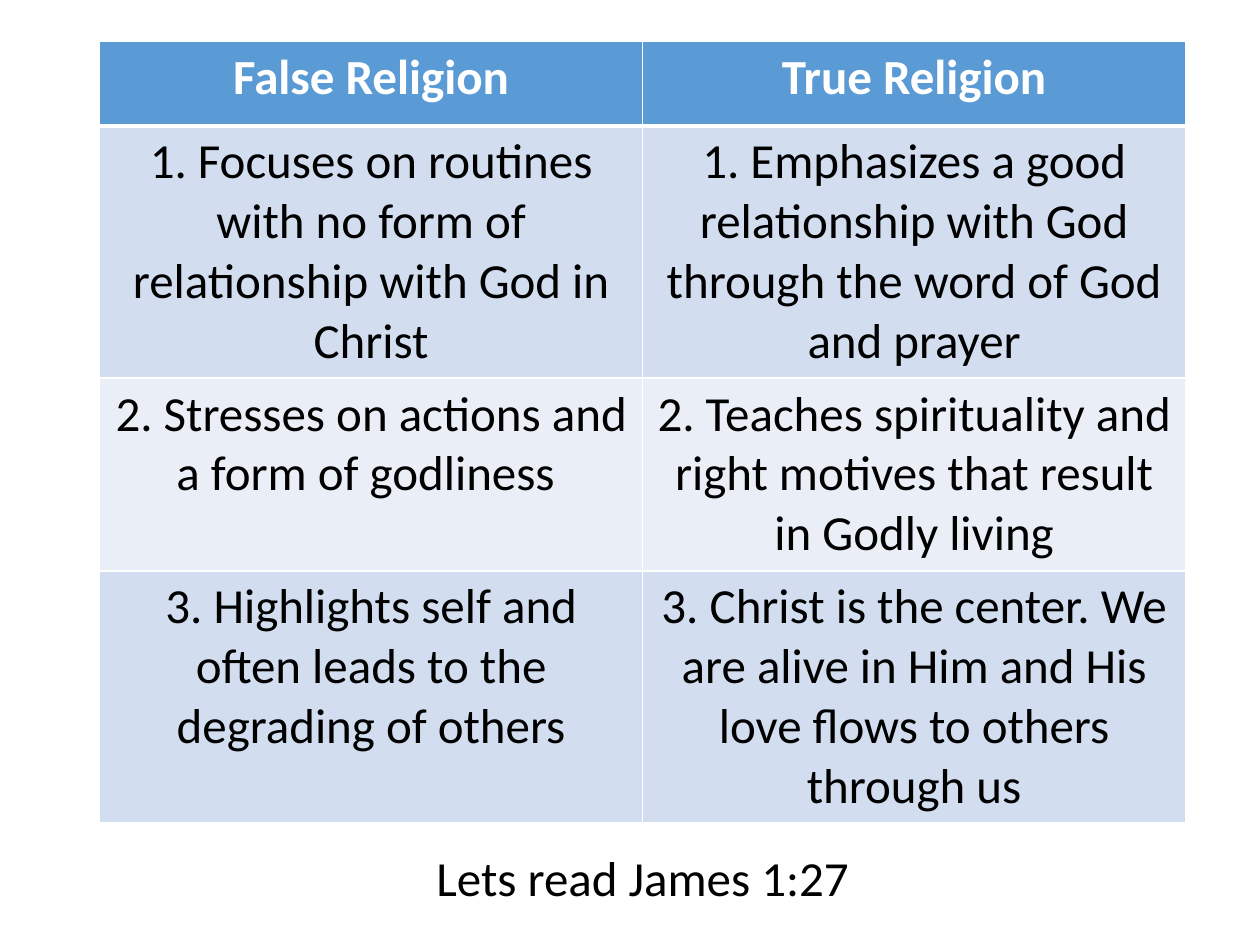
from dataclasses import dataclass

from lxml.etree import SubElement
from pptx import Presentation
from pptx.dml.color import RGBColor
from pptx.enum.text import PP_ALIGN
from pptx.oxml.ns import qn
from pptx.util import Inches, Pt

WIDTH, HEIGHT = Inches(10), Inches(7.5)
WHITE, BLACK = "FFFFFF", "000000"


@dataclass(frozen=True)
class Band:
    false_religion: str
    true_religion: str
    height: float
    fill: str
    ink: str = BLACK
    bold: bool = False
    top: float = 1
    bottom: float = 1


BANDS = [
    Band("False Religion", "True Religion", 0.67, "5B9BD5", WHITE, True, bottom=3),
    Band("1. Focuses on routines with no form of relationship with God in Christ",
         "1. Emphasizes a good relationship with God through the word of God and prayer",
         2, "D2DEEF", top=3),
    Band("2. Stresses on actions and a form of godliness ",
         "2. Teaches spirituality and right motives that result in Godly living",
         1.53, "EAEFF7"),
    Band("3. Highlights self and often leads to the degrading of others",
         "3. Christ is the center. We are alive in Him and His love flows to others through us",
         2, "D2DEEF"),
]


def color(value: str) -> RGBColor:
    return RGBColor.from_string(value)


def write(frame, text: str, ink: str, bold: bool = False):
    paragraph = frame.paragraphs[0]
    paragraph.alignment = PP_ALIGN.CENTER
    run = paragraph.add_run()
    run.text = text
    run.font.name = "Calibri"
    run.font.size = Pt(28)
    run.font.bold = bold
    run.font.color.rgb = color(ink)
    return paragraph


def draw_borders(cell, band: Band) -> None:
    properties = cell._tc.get_or_add_tcPr()
    widths = {"lnL": 1, "lnR": 1, "lnT": band.top, "lnB": band.bottom}
    for edge, width in widths.items():
        line = SubElement(properties, qn(f"a:{edge}"), w=str(Pt(width)))
        paint = SubElement(line, qn("a:solidFill"))
        SubElement(paint, qn("a:srgbClr"), val=WHITE)


def draw_comparison(slide, bands: list[Band]) -> None:
    total = Inches(sum(band.height for band in bands))
    table = slide.shapes.add_table(
        len(bands), 2, Inches(0.79), Inches(0.33), Inches(8.62), total).table
    for row, band in zip(table.rows, bands):
        row.height = Inches(band.height)
        for cell, text in zip(row.cells, (band.false_religion, band.true_religion)):
            draw_borders(cell, band)
            cell.fill.solid()
            cell.fill.fore_color.rgb = color(band.fill)
            write(cell.text_frame, text, band.ink, band.bold)


def draw_reading(slide, text: str) -> None:
    frame = slide.shapes.add_textbox(
        Inches(0.35), Inches(6.73), int(WIDTH * 0.95), Inches(0.65)).text_frame
    frame.word_wrap = True
    write(frame, text, BLACK).line_spacing = 0.9


def main() -> None:
    deck = Presentation()
    deck.slide_width, deck.slide_height = WIDTH, HEIGHT
    slide = deck.slides.add_slide(deck.slide_layouts[6])
    draw_comparison(slide, BANDS)
    draw_reading(slide, "Lets read James 1:27")
    deck.save("out.pptx")


if __name__ == "__main__":
    main()
